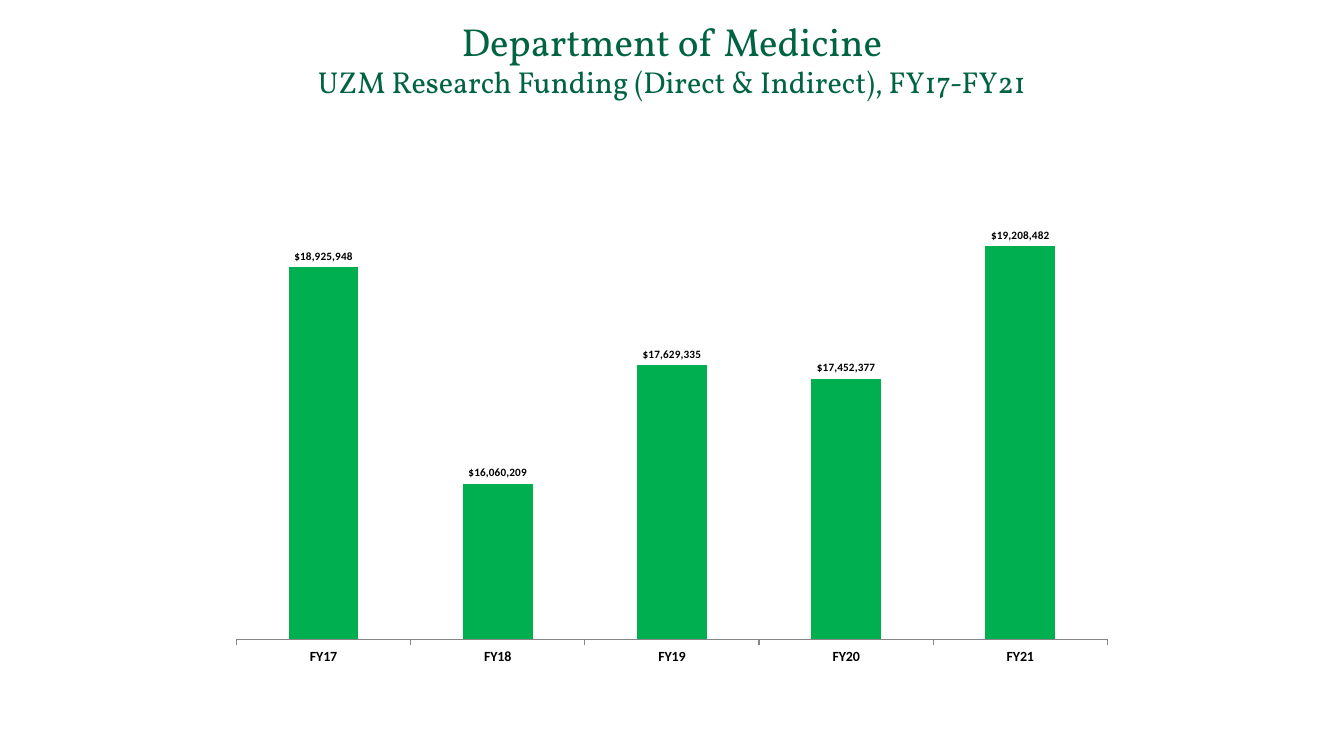
from typing import NamedTuple

from pptx import Presentation
from pptx.chart.data import CategoryChartData
from pptx.dml.color import RGBColor
from pptx.enum.chart import XL_CHART_TYPE, XL_LABEL_POSITION, XL_TICK_MARK
from pptx.enum.text import MSO_ANCHOR, MSO_AUTO_SIZE, PP_ALIGN
from pptx.slide import Slide
from pptx.util import Emu, Pt

EMU_PER_PX = 9525
COLORS = {"heading": "006341", "bar": "00B050", "text": "000000", "axis": "868686"}
DOLLARS = '"$"#,##0'


class Box(NamedTuple):
    left: int
    top: int
    width: int
    height: int


class HeadingLine(NamedTuple):
    text: str
    size: float


class YearFunding(NamedTuple):
    year: str
    dollars: int


HEADING = [
    HeadingLine("Department of Medicine", 27.9),
    HeadingLine("UZM Research Funding (Direct & Indirect), FY17-FY21", 21.6),
]
FUNDING = [
    YearFunding("FY17", 18925948),
    YearFunding("FY18", 16060209),
    YearFunding("FY19", 17629335),
    YearFunding("FY20", 17452377),
    YearFunding("FY21", 19208482),
]


def px(length: int) -> Emu:
    return Emu(length * EMU_PER_PX)


def color(name: str) -> RGBColor:
    return RGBColor.from_string(COLORS[name])


def add_heading(slide: Slide, box: Box, lines: list[HeadingLine]) -> None:
    heading = slide.shapes.title
    heading.left, heading.top, heading.width, heading.height = map(px, box)
    frame = heading.text_frame
    frame.auto_size = MSO_AUTO_SIZE.NONE
    frame.word_wrap = True
    frame.vertical_anchor = MSO_ANCHOR.MIDDLE
    frame.margin_left = frame.margin_right = frame.margin_top = 0
    frame.margin_bottom = px(17)
    # A vertical tab becomes a line break inside the paragraph
    frame.text = "\v".join(line.text for line in lines)
    paragraph = frame.paragraphs[0]
    paragraph.alignment = PP_ALIGN.CENTER
    paragraph.line_spacing = 0.96
    for run, line in zip(paragraph.runs, lines):
        run.font.name = "Vollkorn"
        run.font.size = Pt(line.size)
        run.font.color.rgb = color("heading")


def add_funding_chart(slide: Slide, box: Box, funding: list[YearFunding]) -> None:
    data = CategoryChartData(number_format=DOLLARS)
    data.categories = [entry.year for entry in funding]
    data.add_series("Series 1", [entry.dollars for entry in funding])
    chart = slide.shapes.add_chart(
        XL_CHART_TYPE.COLUMN_CLUSTERED, *map(px, box), data
    ).chart
    chart.has_legend = False
    chart.has_title = False
    chart.font.name = "Calibri"
    chart.font.size = Pt(10)
    chart.font.color.rgb = color("text")

    # Axes
    dollar_axis = chart.value_axis
    dollar_axis.minimum_scale = 14_000_000
    dollar_axis.maximum_scale = 20_000_000
    dollar_axis.has_major_gridlines = False
    dollar_axis.visible = False
    year_axis = chart.category_axis
    year_axis.major_tick_mark = XL_TICK_MARK.OUTSIDE
    year_axis.tick_labels.font.bold = True
    year_axis.format.line.color.rgb = color("axis")
    year_axis.format.line.width = Pt(0.75)

    # Bars and their labels
    plot = chart.plots[0]
    plot.gap_width = 150
    plot.vary_by_categories = False
    bars = plot.series[0]
    bars.format.fill.solid()
    bars.format.fill.fore_color.rgb = color("bar")
    labels = bars.data_labels
    labels.show_value = True
    labels.number_format = DOLLARS
    labels.number_format_is_linked = False
    labels.position = XL_LABEL_POSITION.OUTSIDE_END
    labels.font.size = Pt(8)
    labels.font.bold = True


def main() -> None:
    presentation = Presentation()
    presentation.slide_width = px(1280)
    presentation.slide_height = px(720)
    title_only = presentation.slide_layouts[5]
    slide = presentation.slides.add_slide(title_only)
    add_heading(slide, Box(64, 34, 1152, 65), HEADING)
    add_funding_chart(slide, Box(208, 168, 864, 475), FUNDING)
    presentation.save("out.pptx")


if __name__ == "__main__":
    main()
